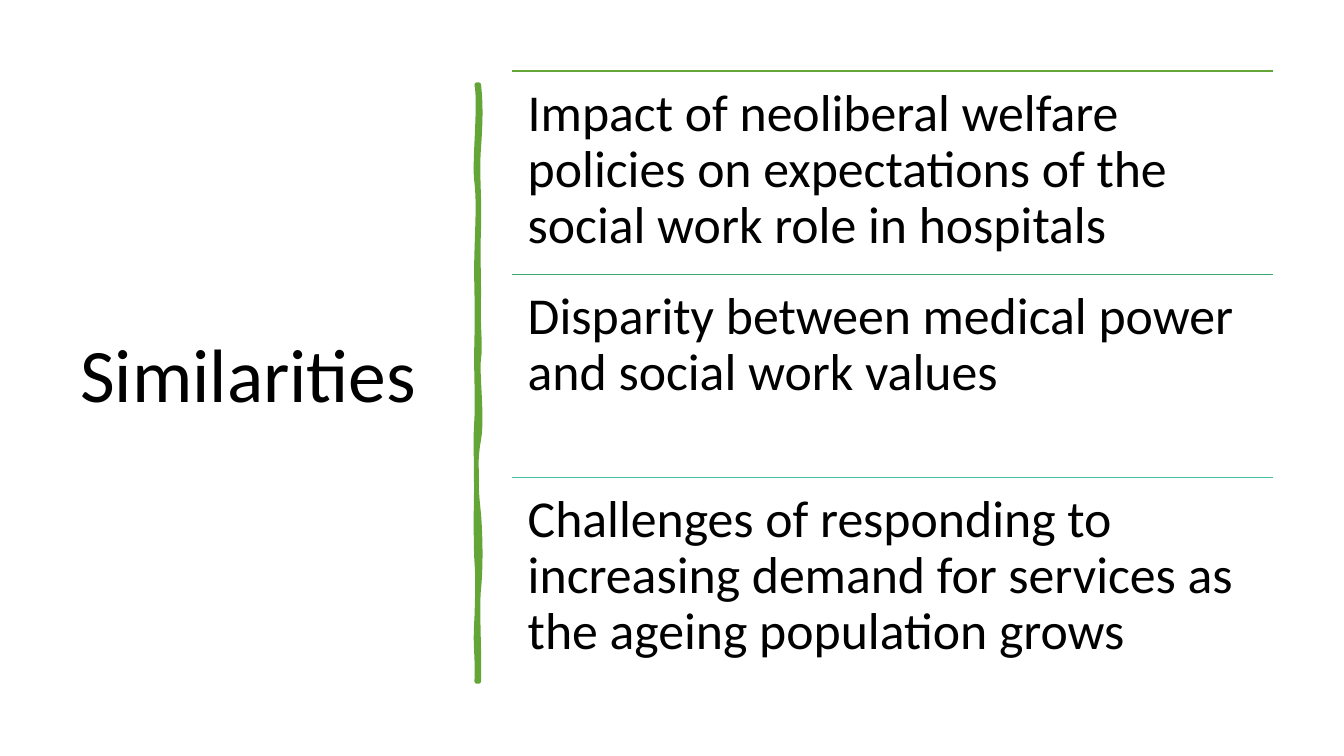
import pptx
import pptx.util
import pptx.dml.color
import pptx.enum.shapes
import pptx.enum.text
import pptx.oxml.ns
import lxml.etree

Cm = pptx.util.Cm
Pt = pptx.util.Pt
qn = pptx.oxml.ns.qn
CM_PER_INCH = 2.54
COLORS = {"text": "000000", "green": "63A537", "leaf": "37A76F", "teal": "44C1A3"}

POINTS = [
    ("Impact of neoliberal welfare policies on expectations of the "
     "social work role in hospitals", "green"),
    ("Disparity between medical power and social work values", "leaf"),
    ("Challenges of responding to increasing demand for services as "
     "the ageing population grows", "teal"),
]

# Brush stroke in inches: each curve is control 1, control 2, end height
RIGHT_X, LEFT_X, BRUSH_TOP, BRUSH_BOTTOM = 4.75, 4.73, 0.84, 6.76
RIGHT_EDGE = [
    (4.77, 1.02, 4.77, 1.19, 1.46), (4.73, 1.73, 4.76, 1.95, 2.26),
    (4.74, 2.57, 4.75, 2.62, 2.94), (4.74, 3.25, 4.77, 3.42, 3.56),
    (4.73, 3.70, 4.79, 4.14, 4.36), (4.71, 4.57, 4.72, 4.84, 5.10),
    (4.77, 5.36, 4.77, 5.64, 5.84), (4.73, 6.03, 4.76, 6.50, BRUSH_BOTTOM),
]
LEFT_EDGE = [
    (4.74, 6.76, 4.73, 6.76, BRUSH_BOTTOM),
    (4.74, 6.46, 4.71, 6.44, 6.13), (4.74, 5.83, 4.74, 5.70, 5.57),
    (4.72, 5.44, 4.72, 4.95, 4.77), (4.73, 4.59, 4.71, 4.45, 4.15),
    (4.74, 3.86, 4.72, 3.73, 3.35), (4.74, 2.98, 4.72, 2.81, 2.50),
    (4.74, 2.18, 4.75, 2.00, 1.81), (4.70, 1.63, 4.77, 1.04, BRUSH_TOP),
]


class SlideWriter:
    def __init__(self, page, font="Calibri"):
        self.page = page
        self.font = font

    def color(self, name):
        return pptx.dml.color.RGBColor.from_string(COLORS[name])

    def text(self, words, left, top, width, height, size, anchor, inset):
        box = self.page.shapes.add_textbox(Cm(left), Cm(top), Cm(width), Cm(height))
        frame = box.text_frame
        frame.word_wrap = True
        frame.vertical_anchor = anchor
        frame.margin_left = frame.margin_right = Cm(inset)
        frame.margin_top = frame.margin_bottom = Cm(inset)
        para = frame.paragraphs[0]
        para.text = words
        para.line_spacing = 0.9
        para.font.name = self.font
        para.font.size = Pt(size)
        para.font.color.rgb = self.color("text")

    def rule(self, left, top, width, color):
        line = self.page.shapes.add_connector(
            pptx.enum.shapes.MSO_CONNECTOR.STRAIGHT,
            Cm(left), Cm(top), Cm(left + width), Cm(top))
        line.line.color.rgb = self.color(color)
        line.line.width = Pt(1)
        lxml.etree.SubElement(line.element.spPr, qn("a:effectLst"))

    def brush(self, start, curves, color):
        """Draw a closed outline; each curve is two controls and an end point."""
        def place(point):
            return tuple(Cm(value * CM_PER_INCH) for value in point)

        builder = self.page.shapes.build_freeform(*place(start))
        builder.add_line_segments([place(curve[-1]) for curve in curves], close=True)
        shape = builder.convert_to_shape()
        shape.shadow.inherit = False
        shape.fill.solid()
        shape.fill.fore_color.rgb = self.color(color)
        shape.line.color.rgb = self.color(color)
        shape.line.width = Pt(3.25)
        outline = shape.element.spPr
        lxml.etree.SubElement(outline.find(qn("a:ln")), qn("a:round"))

        # Bend the straight segments
        segments = list(outline.iter(qn("a:lnTo")))
        for segment, curve in zip(segments, curves):
            bend = lxml.etree.Element(qn("a:cubicBezTo"))
            for x, y in map(place, curve):
                lxml.etree.SubElement(bend, qn("a:pt"), x=str(x - shape.left),
                                      y=str(y - shape.top))
            segment.getparent().replace(segment, bend)


def main():
    deck = pptx.Presentation()
    deck.slide_width, deck.slide_height = Cm(33.87), Cm(19.05)
    writer = SlideWriter(deck.slides.add_slide(deck.slide_layouts[6]))
    anchors = pptx.enum.text.MSO_ANCHOR

    # Title
    writer.text("Similarities", 1.77, 1.76, 9.5, 15.52, 54, anchors.MIDDLE, 0.25)

    # Hand-drawn divider
    curves = [((x1, y1), (x2, y2), (x, end_y))
              for x, edge in ((RIGHT_X, RIGHT_EDGE), (LEFT_X, LEFT_EDGE))
              for x1, y1, x2, y2, end_y in edge]
    writer.brush((RIGHT_X, BRUSH_TOP), curves, "green")

    # Points, each under its own rule
    left, top, width, height = 12.91, 1.79, 19.18, 5.12
    for row, (words, color) in enumerate(POINTS):
        row_top = top + row * height
        writer.rule(left, row_top, width, color)
        writer.text(words, left, row_top, width, height, 37, anchors.TOP, 0.39)

    deck.save("out.pptx")


if __name__ == "__main__":
    main()
